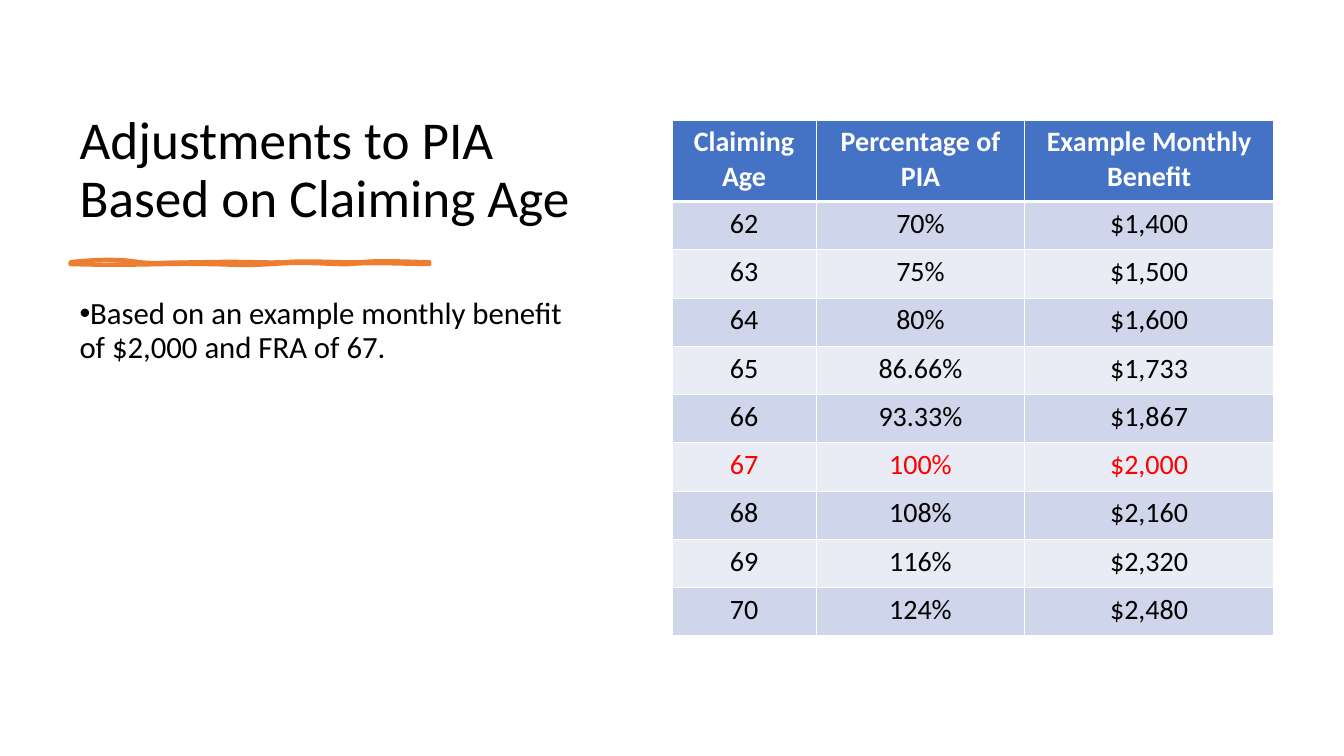
from pptx import Presentation
from pptx.dml.color import RGBColor
from pptx.enum.text import MSO_ANCHOR, MSO_AUTO_SIZE, PP_ALIGN
from pptx.oxml.ns import qn
from pptx.util import Inches, Pt
from lxml.etree import SubElement

BLACK = RGBColor(0x00, 0x00, 0x00)
WHITE = RGBColor(0xFF, 0xFF, 0xFF)
RED = RGBColor(0xFF, 0x00, 0x00)
ORANGE = RGBColor(0xED, 0x7D, 0x31)
BLUE = RGBColor(0x44, 0x72, 0xC4)
BANDS = RGBColor(0xCF, 0xD5, 0xEA), RGBColor(0xE9, 0xEB, 0xF5)
FONT = "Calibri"

WIDTH, HEIGHT = Inches(13.33), Inches(7.5)
GRID_COLUMNS, GRID_ROWS = 100, 75

FULL_RETIREMENT_AGE = "67"
HEADERS = "Claiming Age", "Percentage of PIA", "Example Monthly Benefit"
BENEFITS = [
    ("62", "70%", "$1,400"),
    ("63", "75%", "$1,500"),
    ("64", "80%", "$1,600"),
    ("65", "86.66%", "$1,733"),
    ("66", "93.33%", "$1,867"),
    ("67", "100%", "$2,000"),
    ("68", "108%", "$2,160"),
    ("69", "116%", "$2,320"),
    ("70", "124%", "$2,480"),
]
# Table columns and header row in grid units
TABLE_COLUMNS = 10.73, 15.53, 18.49
HEADER_ROWS = 8.1
HEADER_BORDERS = {"lnL": 1, "lnR": 1, "lnT": 1, "lnB": 3}

# Hand-drawn rule: a start point, then three Bezier points per curve,
# measured in a box of 356 by 2 units
STROKE_UNITS = 356, 2
STROKE_LINE = [
    (0, 0), (27, -3), (51, -3), (68, 0), (85, 2), (107, 0), (139, 0),
    (171, -1), (190, 1), (214, 0), (238, -2), (269, 1), (289, 0),
    (309, -2), (342, 0), (356, 0), (356, 0), (356, 1), (356, 2),
    (338, 2), (294, 0), (278, 2), (262, 3), (234, -1), (200, 2),
    (165, 4), (161, 2), (129, 2), (96, 1), (62, 4), (0, 2),
    (0, 1), (0, 0), (0, 0),
]
STROKE_FILL = [
    (0, 0), (32, 2), (40, 0), (68, 0), (96, -1), (99, -3), (129, 0),
    (158, 2), (191, 1), (207, 0), (223, -2), (257, 2), (274, 0),
    (292, -3), (327, 3), (356, 0), (356, 0), (356, 1), (356, 2),
    (342, 1), (302, 4), (285, 2), (268, -1), (239, 2), (207, 2),
    (174, 1), (170, 0), (146, 2), (123, 3), (109, 1), (75, 2),
    (41, 2), (22, 1), (0, 2), (0, 1), (0, 0), (0, 0),
]


def grid_box(column, row, columns, rows):
    """Turn grid units into left, top, width and height."""
    return (int(WIDTH * column / GRID_COLUMNS), int(HEIGHT * row / GRID_ROWS),
            int(WIDTH * columns / GRID_COLUMNS), int(HEIGHT * rows / GRID_ROWS))


def set_font(paragraph, size, color, bold=False):
    font = paragraph.font
    font.name, font.size, font.bold = FONT, Pt(size), bold
    font.color.rgb = color


def add_title(slide, box):
    title = slide.shapes.title
    title.left, title.top, title.width, title.height = box
    frame = title.text_frame
    frame.text = "Adjustments to PIA Based on Claiming Age"
    frame.word_wrap = True
    frame.auto_size = MSO_AUTO_SIZE.NONE
    frame.vertical_anchor = MSO_ANCHOR.BOTTOM
    paragraph = frame.paragraphs[0]
    paragraph.alignment = PP_ALIGN.LEFT
    paragraph.line_spacing = 0.9
    set_font(paragraph, 38, BLACK)


def add_curves(outlines, points, size, **paint):
    """Add one closed chain of Bezier curves to a list of outlines."""
    outline = SubElement(outlines, qn("a:path"), w=str(size[0]), h=str(size[1]), **paint)
    scaled = [[str(round(value * length / units))
               for value, length, units in zip(point, size, STROKE_UNITS)]
              for point in points]
    start = SubElement(outline, qn("a:moveTo"))
    SubElement(start, qn("a:pt"), x=scaled[0][0], y=scaled[0][1])
    for first in range(1, len(scaled), 3):
        curve = SubElement(outline, qn("a:cubicBezTo"))
        for x, y in scaled[first:first + 3]:
            SubElement(curve, qn("a:pt"), x=x, y=y)
    SubElement(outline, qn("a:close"))


def add_stroke(slide, box):
    left, top, width, height = box
    builder = slide.shapes.build_freeform(left, top)
    builder.add_line_segments([(left + width, top), (left + width, top + height),
                               (left, top + height)], close=True)
    stroke = builder.convert_to_shape()
    stroke.shadow.inherit = False
    stroke.fill.solid()
    stroke.fill.fore_color.rgb = ORANGE
    stroke.line.color.rgb = ORANGE
    stroke.line.width = Pt(3)
    # Curved outlines in place of the straight ones
    outlines = stroke._element.spPr.find(".//" + qn("a:pathLst"))
    outlines.clear()
    add_curves(outlines, STROKE_LINE, (width, height), fill="none")
    add_curves(outlines, STROKE_FILL, (width, height), stroke="0")


def add_note(slide, box):
    frame = slide.shapes.add_textbox(*box).text_frame
    frame.word_wrap = True
    paragraph = frame.paragraphs[0]
    paragraph.text = "Based on an example monthly benefit of $2,000 and FRA of 67."
    paragraph.line_spacing = 0.9
    paragraph.space_after = Pt(6)
    # Bullet
    properties = paragraph._p.get_or_add_pPr()
    properties.set("marL", "0")
    properties.set("indent", str(-Inches(0.25)))
    SubElement(properties, qn("a:buFont"), typeface="Arial")
    SubElement(properties, qn("a:buChar"), char="•")
    set_font(paragraph, 22, BLACK)


def add_borders(cell, borders):
    properties = cell._tc.get_or_add_tcPr()
    for position, (side, points) in enumerate(borders.items()):
        border = SubElement(properties, qn("a:" + side), w=str(Pt(points)))
        fill = SubElement(border, qn("a:solidFill"))
        SubElement(fill, qn("a:srgbClr"), val=str(WHITE))
        properties.insert(position, border)


def add_benefit_table(slide, box):
    rows = [HEADERS, *BENEFITS]
    table = slide.shapes.add_table(len(rows), len(HEADERS), *box).table
    for column, columns in zip(table.columns, TABLE_COLUMNS):
        column.width = int(WIDTH * columns / GRID_COLUMNS)
    header_height = int(HEIGHT * HEADER_ROWS / GRID_ROWS)
    row_height = (box[3] - header_height) // len(BENEFITS)
    for index, values in enumerate(rows):
        header = index == 0
        table.rows[index].height = header_height if header else row_height
        if header:
            color, fill = WHITE, BLUE
        else:
            color = RED if values[0] == FULL_RETIREMENT_AGE else BLACK
            fill = BANDS[(index - 1) % 2]
        for cell, value in zip(table.rows[index].cells, values):
            cell.text = value
            cell.fill.solid()
            cell.fill.fore_color.rgb = fill
            if header:
                add_borders(cell, HEADER_BORDERS)
            paragraph = cell.text_frame.paragraphs[0]
            paragraph.alignment = PP_ALIGN.CENTER
            set_font(paragraph, 20, color, bold=header)


def main():
    presentation = Presentation()
    presentation.slide_width, presentation.slide_height = WIDTH, HEIGHT
    slide = presentation.slides.add_slide(presentation.slide_layouts[5])
    add_title(slide, grid_box(5.18, 7, 39.53, 16.2))
    add_stroke(slide, grid_box(5.25, 26, 26.7, 0.2))
    add_note(slide, grid_box(5.18, 29.1, 39.53, 38.8))
    add_benefit_table(slide, grid_box(50, 11.9, 44.75, 51.2))
    presentation.save("out.pptx")


if __name__ == "__main__":
    main()
